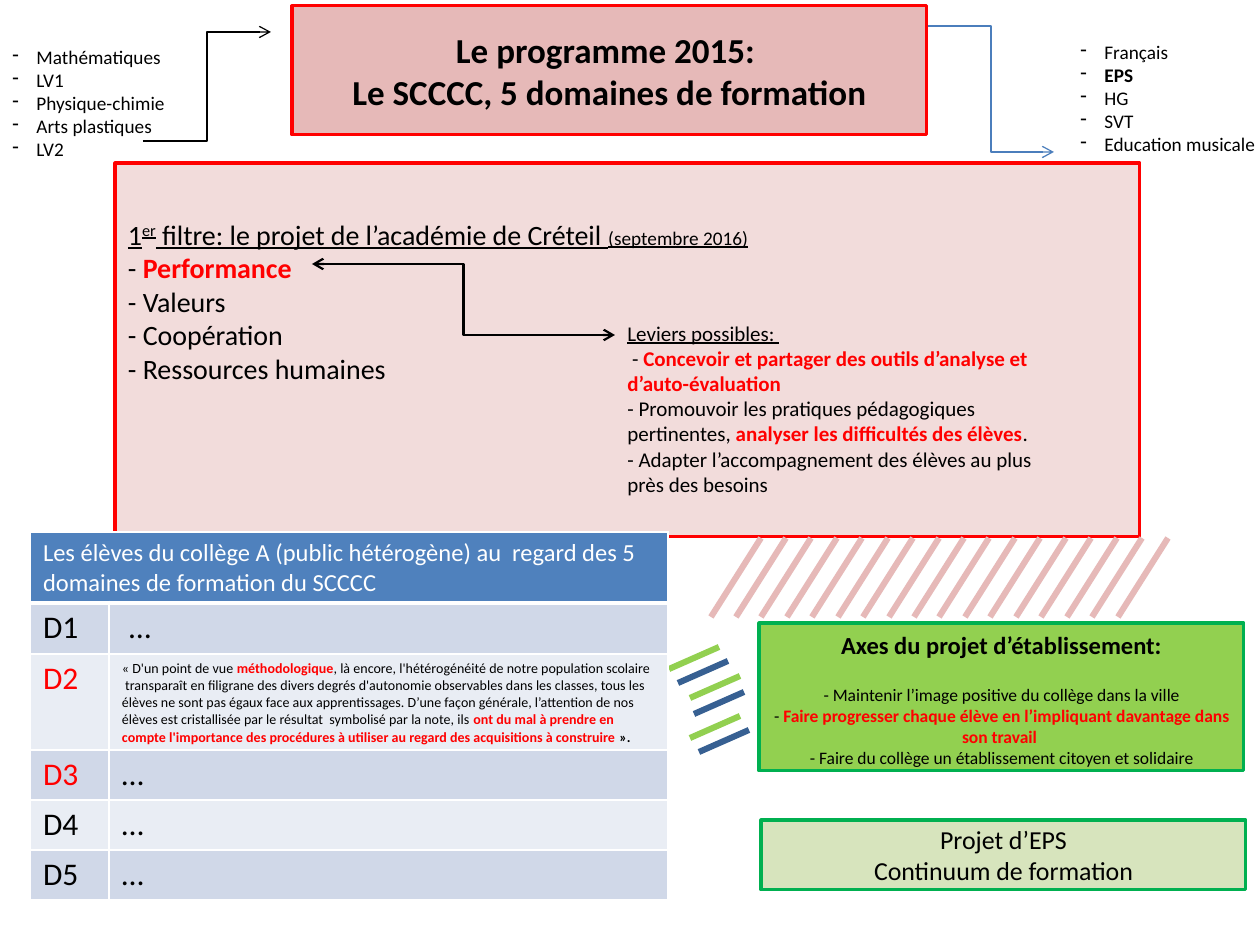
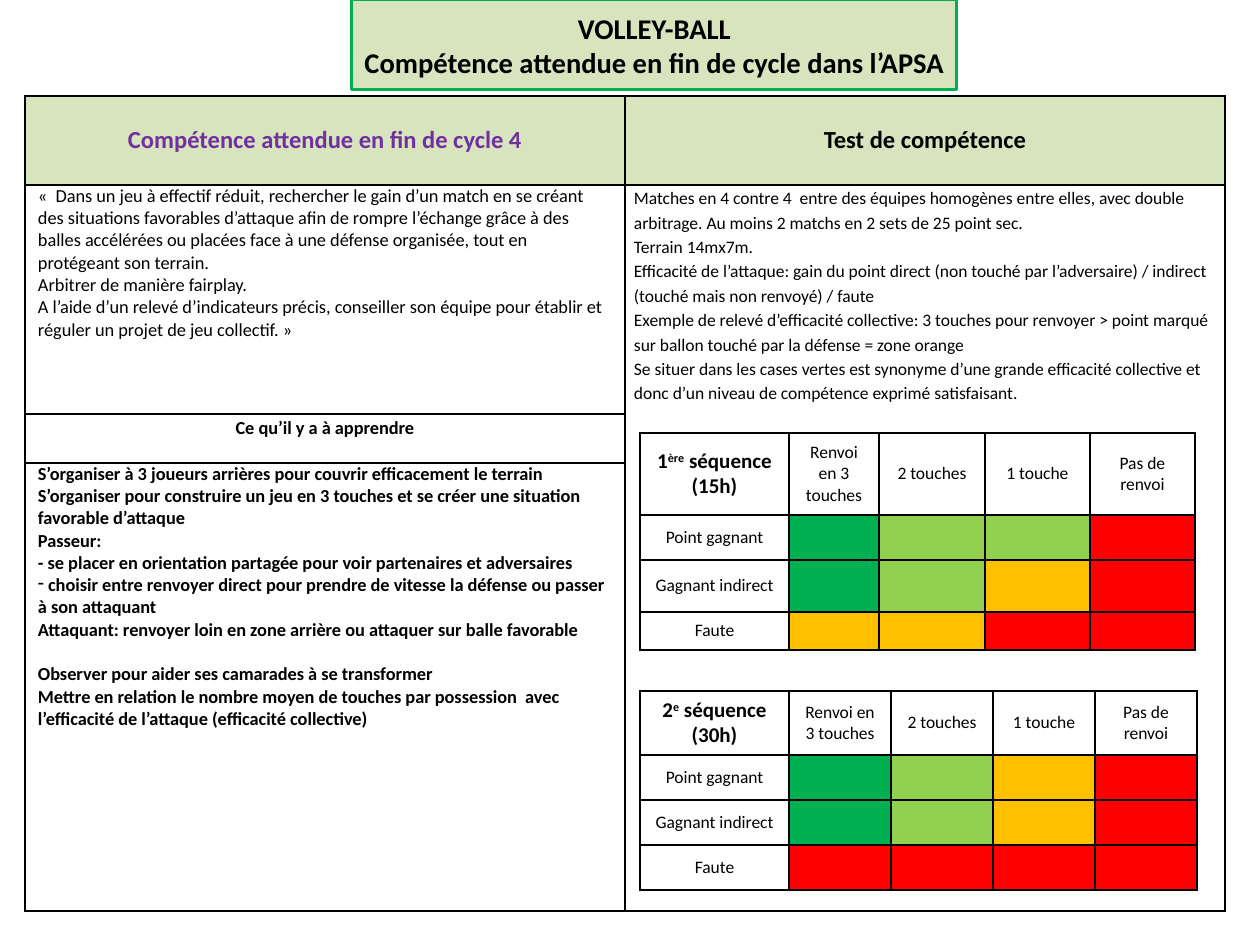
from dataclasses import dataclass
from itertools import cycle
from typing import NamedTuple

from lxml.etree import SubElement
from pptx import Presentation
from pptx.dml.color import RGBColor
from pptx.enum.shapes import MSO_CONNECTOR as Link, MSO_SHAPE as Preset
from pptx.enum.text import MSO_ANCHOR as Anchor, PP_ALIGN as Align
from pptx.oxml.ns import qn
from pptx.util import Emu, Pt

EMU_PER_PX = 914400 / 126


@dataclass(frozen=True)
class Theme:
    font: str = "Calibri"
    black: str = "000000"
    white: str = "FFFFFF"
    red: str = "FF0000"
    rose: str = "E6B9B8"
    pale_rose: str = "F2DCDB"
    emerald: str = "00B050"
    lime: str = "92D050"
    pale_green: str = "D7E4BD"
    amber: str = "FFC000"
    purple: str = "7030A0"
    arrow_blue: str = "4B7EBC"
    navy: str = "376092"
    header_blue: str = "4F81BD"
    band_dark: str = "D0D8E8"
    band_light: str = "E9EDF4"
    title: float = 20
    volley_title: float = 16.3
    domain: float = 18
    filter: float = 16
    project: float = 14.8
    heading: float = 14
    medium: float = 12
    subject: float = 11
    skill: float = 10.5
    small: float = 10
    quote: float = 8


T = Theme()
SUPER = {"raised": True}


class Box(NamedTuple):
    x: int
    y: int
    w: int
    h: int

    def inner(self, dx, dy, w, h):
        return Box(self.x + dx, self.y + dy, w, h)

    def emu(self):
        return [px(value) for value in self]


def px(value):
    return Emu(round(value * EMU_PER_PX))


def rgb(code):
    return RGBColor.from_string(code)


def key(text):
    return text, {"color": T.red, "bold": True}


def style_run(run, size, color=T.black, bold=False, underline=False, raised=False):
    font = run.font
    font.name, font.size, font.bold, font.underline = T.font, Pt(size), bold, underline
    font.color.rgb = rgb(color)
    if raised:
        run._r.get_or_add_rPr().set("baseline", "30000")


def write(frame, lines, align=Align.LEFT, spacing=None, **style):
    for index, pieces in enumerate(lines):
        paragraph = frame.add_paragraph() if index else frame.paragraphs[0]
        paragraph.alignment = align
        paragraph.line_spacing = spacing
        for piece in [pieces] if isinstance(pieces, str) else pieces:
            text, changes = (piece, {}) if isinstance(piece, str) else piece
            run = paragraph.add_run()
            run.text = text
            style_run(run, **{**style, **changes})
    return frame.paragraphs


def bullet(paragraph, indent):
    props = paragraph._p.get_or_add_pPr()
    props.set("marL", str(px(indent)))
    props.set("indent", str(-px(indent)))
    SubElement(props, qn("a:buChar")).set("char", "-")


def set_insets(target, side, top, bottom):
    target.margin_left = target.margin_right = px(side)
    target.margin_top, target.margin_bottom = px(top), px(bottom)


def panel(shapes, box, fill, edge, lines, anchor=Anchor.MIDDLE, side=13, top=6, **style):
    shape = shapes.add_shape(Preset.RECTANGLE, *box.emu())
    shape.shadow.inherit = False
    shape.fill.solid()
    shape.fill.fore_color.rgb = rgb(fill)
    shape.line.color.rgb = rgb(edge)
    shape.line.width = Pt(1.75)
    frame = shape.text_frame
    frame.word_wrap = True
    frame.vertical_anchor = anchor
    set_insets(frame, side, top, 6)
    return write(frame, lines, **style)


def note(shapes, box, lines, wrap, **style):
    frame = shapes.add_textbox(*box.emu()).text_frame
    frame.word_wrap = wrap
    return write(frame, lines, **style)


def link(shapes, start, end, color, width, kind=Link.STRAIGHT, ends=()):
    line = shapes.add_connector(kind, *[px(value) for value in (*start, *end)])
    line.line.color.rgb = rgb(color)
    line.line.width = Pt(width)
    for end_name in ends:
        SubElement(line.line._get_or_add_ln(), qn(f"a:{end_name}")).set("type", "arrow")
    SubElement(line._element.spPr, qn("a:effectLst"))


def add_grid(shapes, box, columns, rows):
    table = shapes.add_table(len(rows), len(columns), *box.emu()).table
    table.first_row = table.horz_banding = False
    for column, width in zip(table.columns, columns):
        column.width = px(width)
    for row, height in zip(table.rows, rows):
        row.height = px(height)
    return table


def fill_cell(cell, lines=(), fill=None, edge=T.black, top_rule=1, bottom_rule=1,
              anchor=Anchor.TOP, side=13, inset=6, **style):
    cell.vertical_anchor = anchor
    set_insets(cell, side, inset, inset)
    props = cell._tc.get_or_add_tcPr()
    for name, width in (("lnL", 1), ("lnR", 1), ("lnT", top_rule), ("lnB", bottom_rule)):
        border = SubElement(props, qn(f"a:{name}"), w=str(Pt(width)))
        SubElement(SubElement(border, qn("a:solidFill")), qn("a:srgbClr")).set("val", edge)
    if fill:
        cell.fill.solid()
        cell.fill.fore_color.rgb = rgb(fill)
    else:
        cell.fill.background()
    if not lines:
        SubElement(cell.text_frame.paragraphs[0]._p, qn("a:endParaRPr")).set("sz", "1000")
    return write(cell.text_frame, lines, **style)


def programme_header(shapes, box):
    panel(shapes, box.inner(292, 6, 635, 129), T.rose, T.red,
          ["Le programme 2015: ", "Le SCCCC, 5 domaines de formation"],
          align=Align.CENTER, size=T.title, bold=True)
    sciences = ["Mathématiques", "LV1", "Physique-chimie", "Arts plastiques", "LV2"]
    humanities = ["Français", [("EPS", {"bold": True})], "HG", "SVT", "Education musicale"]
    for subjects, dx, dy, width in ((sciences, 0, 39, 179), (humanities, 1068, 34, 202)):
        for subject in note(shapes, box.inner(dx, dy, width, 130), subjects, False,
                            size=T.subject):
            bullet(subject, 24)
    for start, end, color in (((928, 26), (1054, 152), T.arrow_blue),
                              ((143, 141), (271, 32), T.black)):
        link(shapes, (box.x + start[0], box.y + start[1]), (box.x + end[0], box.y + end[1]),
             color, 0.75, Link.ELBOW, ["tailEnd"])


def academy_filter(shapes, box):
    under = {"underline": True}
    panel(shapes, box, T.pale_rose, T.red, [
        [("1", under), ("er", {**under, **SUPER}),
         (" filtre: le projet de l’académie de Créteil ", under),
         ("(septembre 2016)", {**under, "size": T.subject})],
        ["- ", key("Performance")], "- Valeurs", "- Coopération", "- Ressources humaines",
    ], anchor=Anchor.TOP, top=54, align=Align.LEFT, size=T.filter)
    link(shapes, (box.x + 197, box.y + 101), (box.x + 500, box.y + 172), T.black, 1.25,
         Link.ELBOW, ["headEnd", "tailEnd"])
    note(shapes, box.inner(500, 151, 446, 190), [
        [("Leviers possibles: ", under)],
        [" - ", key("Concevoir et partager des outils d’analyse et d’auto-évaluation")],
        ["- Promouvoir les pratiques pédagogiques pertinentes, ",
         key("analyser les difficultés des élèves"), "."],
        "- Adapter l’accompagnement des élèves au plus près des besoins",
    ], True, size=T.medium)


def pupil_profile(shapes, box):
    table = add_grid(shapes, box, [79, box.w - 79], [71, 51, 96, 50, 50, 50])
    table.cell(0, 0).merge(table.cell(0, 1))
    header = {"fill": T.header_blue, "edge": T.white, "bottom_rule": 3}
    fill_cell(table.cell(0, 0), [
        "Les élèves du collège A (public hétérogène) au  regard des 5 domaines de formation "
        "du SCCCC"], size=T.heading, color=T.white, **header)
    fill_cell(table.cell(0, 1), **header)
    method = [
        ["« D'un point de vue ", key("méthodologique"),
         ", là encore, l'hétérogénéité de notre population scolaire"],
        [" transparaît en filigrane des divers degrés d'autonomie observables dans les classes, "
         "tous les élèves ne sont pas égaux face aux apprentissages. D’une façon générale, "
         "l’attention de nos élèves est cristallisée par le résultat  symbolisé par la note, ils ",
         key("ont du mal à prendre en compte l'importance des procédures à utiliser au regard "
             "des acquisitions à construire"), (" ».", {"bold": True})]]
    remarks = [[" …"], method, ["…"], ["…"], ["…"]]
    for row, (remark, band) in enumerate(zip(remarks, cycle((T.band_dark, T.band_light))), 1):
        look = {"fill": band, "edge": T.white, "top_rule": 3 if row == 1 else 1}
        fill_cell(table.cell(row, 0), [f"D{row}"], size=T.domain,
                  color=T.red if row in (2, 3) else T.black, **look)
        fill_cell(table.cell(row, 1), remark,
                  size=T.quote if remark is method else T.domain, **look)


def filter_hatching(shapes, box, count=17, slant=50):
    for index in range(count):
        x = box.x + (box.w - slant) * index // (count - 1)
        link(shapes, (x, box.y + box.h), (x + slant, box.y), T.rose, 3.5)


def profile_dashes(shapes, box):
    starts = [(0, 22), (9, 36), (21, 51), (25, 67), (21, 91), (30, 105)]
    for (dx, dy), color in zip(starts, cycle((T.lime, T.navy))):
        x, y = box.x + dx, box.y + dy
        link(shapes, (x, y), (x + 50, y - 22), color, 3.5)


def school_projects(shapes, box):
    axes = panel(shapes, box.inner(0, 0, 485, 148), T.lime, T.emerald, [
        [("Axes du projet d’établissement:", {"size": T.heading, "bold": True})],
        "- Maintenir l’image positive du collège dans la ville",
        ["- ", key("Faire progresser chaque élève en l’impliquant davantage dans son travail ")],
        "- Faire du collège un établissement citoyen et solidaire",
    ], anchor=Anchor.TOP, top=7, align=Align.CENTER, size=T.small)
    axes[0].space_after = Pt(14)
    panel(shapes, box.inner(2, 197, 485, 70), T.pale_green, T.emerald,
          ["Projet d’EPS", "Continuum de formation"], align=Align.CENTER, size=T.project)


def skill_title(shapes, box):
    panel(shapes, box, T.pale_green, T.emerald,
          ["VOLLEY-BALL", "Compétence attendue en fin de cycle dans l’APSA"],
          side=6, align=Align.CENTER, size=T.volley_title, bold=True)


def skill_table(shapes, box):
    table = add_grid(shapes, box, [box.w // 2] * 2, [89, 229, 49, 448])
    table.cell(1, 1).merge(table.cell(3, 1))
    for column, (heading, color) in enumerate((
            ("Compétence attendue en fin de cycle 4", T.purple),
            ("Test de compétence", T.black))):
        fill_cell(table.cell(0, column), [heading], T.pale_green, anchor=Anchor.MIDDLE,
                  align=Align.CENTER, size=T.heading, color=color, bold=True)
    fill_cell(table.cell(1, 0), [
        "«  Dans un jeu à effectif réduit, rechercher le gain d’un match en se créant des "
        "situations favorables d’attaque afin de rompre l’échange grâce à des balles accélérées "
        "ou placées face à une défense organisée, tout en protégeant son terrain.",
        "Arbitrer de manière fairplay.",
        "A l’aide d’un relevé d’indicateurs précis, conseiller son équipe pour établir et "
        "réguler un projet de jeu collectif. »"], inset=0, size=T.skill)
    fill_cell(table.cell(1, 1), [
        "Matches en 4 contre 4  entre des équipes homogènes entre elles, avec double arbitrage. "
        "Au moins 2 matchs en 2 sets de 25 point sec.",
        "Terrain 14mx7m.",
        "Efficacité de l’attaque: gain du point direct (non touché par l’adversaire) / indirect "
        "(touché mais non renvoyé) / faute",
        "Exemple de relevé d’efficacité collective: 3 touches pour renvoyer > point marqué sur "
        "ballon touché par la défense = zone orange",
        "Se situer dans les cases vertes est synonyme d’une grande efficacité collective et donc "
        "d’un niveau de compétence exprimé satisfaisant.",
    ], side=9, inset=0, spacing=1.15, size=T.small)
    fill_cell(table.cell(2, 0), ["Ce qu’il y a à apprendre"], side=9, inset=0,
              align=Align.CENTER, spacing=1.15, size=T.skill, bold=True)
    learning = fill_cell(table.cell(3, 0), [
        "S’organiser à 3 joueurs arrières pour couvrir efficacement le terrain",
        "S’organiser pour construire un jeu en 3 touches et se créer une situation favorable "
        "d’attaque",
        "Passeur:",
        "- se placer en orientation partagée pour voir partenaires et adversaires",
        " choisir entre renvoyer direct pour prendre de vitesse la défense ou passer à son "
        "attaquant",
        "Attaquant: renvoyer loin en zone arrière ou attaquer sur balle favorable",
        "Observer pour aider ses camarades à se transformer",
        "Mettre en relation le nombre moyen de touches par possession  avec l’efficacité de "
        "l’attaque (efficacité collective)",
    ], inset=0, size=T.skill, bold=True)
    bullet(learning[4], 0)
    learning[6].space_before = Pt(12.8)
    for row in (2, 3):
        fill_cell(table.cell(row, 1))


def sequence_grid(shapes, box, rank, suffix, hours, columns, rows, results):
    table = add_grid(shapes, box, columns, rows)
    look = {"anchor": Anchor.MIDDLE, "align": Align.CENTER}
    fill_cell(table.cell(0, 0), [[rank, (suffix, SUPER), f" séquence ({hours})"]],
              size=T.medium, bold=True, **look)
    touches = ["Renvoi en 3 touches", "2 touches", "1 touche", "Pas de renvoi"]
    for column, touch in enumerate(touches, 1):
        fill_cell(table.cell(0, column), [touch], size=T.small, **look)
    outcomes = ["Point gagnant", "Gagnant indirect", "Faute"]
    for row, (outcome, levels) in enumerate(zip(outcomes, results), 1):
        fill_cell(table.cell(row, 0), [outcome], size=T.small, **look)
        for column, level in enumerate(levels, 1):
            fill_cell(table.cell(row, column), fill=level)


def programme_slide(shapes):
    programme_header(shapes, Box(0, 0, 1260, 163))
    academy_filter(shapes, Box(115, 163, 1025, 374))
    filter_hatching(shapes, Box(711, 538, 457, 79))
    profile_dashes(shapes, Box(669, 647, 80, 105))
    pupil_profile(shapes, Box(30, 532, 638, 368))
    school_projects(shapes, Box(759, 623, 487, 267))


def volleyball_slide(shapes):
    best, good, fair, poor = T.emerald, T.lime, T.amber, T.red
    skill_title(shapes, Box(352, 0, 605, 90))
    skill_table(shapes, Box(25, 96, 1200, 815))
    sequence_grid(shapes, Box(640, 433, 555, 217), "1", "ère", "15h",
                  [149, 90, 106, 105, 105], [82, 45, 52, 38],
                  [(best, good, good, poor), (best, good, fair, poor), (fair, fair, poor, poor)])
    sequence_grid(shapes, Box(640, 691, 557, 199), "2", "e", "30h",
                  [149] + [102] * 4, [64] + [45] * 3,
                  [(best, good, fair, poor)] * 2 + [(poor,) * 4])


def main():
    deck = Presentation()
    deck.slide_width, deck.slide_height = px(1260), px(945)
    for build in (programme_slide, volleyball_slide):
        build(deck.slides.add_slide(deck.slide_layouts[6]).shapes)
    deck.save("out.pptx")


if __name__ == "__main__":
    main()
